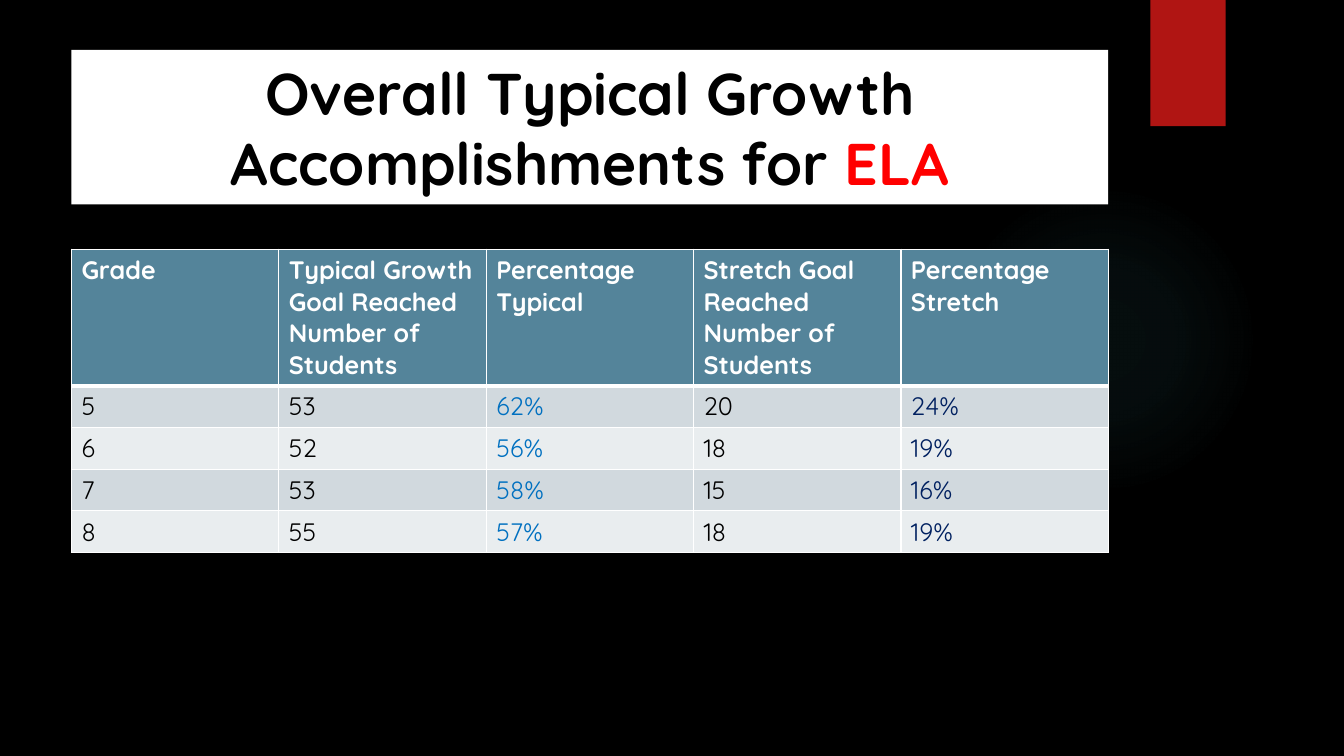
from lxml import etree
from pptx import Presentation
from pptx.dml.color import RGBColor
from pptx.enum.shapes import MSO_SHAPE as Shape
from pptx.enum.text import MSO_ANCHOR as Anchor, PP_ALIGN as Align
from pptx.oxml import parse_xml
from pptx.oxml.ns import nsdecls, qn
from pptx.util import Cm, Pt

# Colours
BLACK = RGBColor(0x00, 0x00, 0x00)
WHITE = RGBColor(0xFF, 0xFF, 0xFF)
RED = RGBColor(0xFF, 0x00, 0x00)
CRIMSON = RGBColor(0xB0, 0x15, 0x13)
TEAL = RGBColor(0x50, 0xB9, 0xC1)
STEEL = RGBColor(0x54, 0x84, 0x9A)
BLUE = RGBColor(0x00, 0x70, 0xC0)
NAVY = RGBColor(0x00, 0x20, 0x60)
BANDS = [RGBColor(0xD1, 0xD9, 0xDE), RGBColor(0xE9, 0xED, 0xEF)]
INKS = [BLACK, BLACK, BLUE, BLACK, NAVY]

# Content
FONT = "Quicksand"
TITLE = [("Overall Typical Growth Accomplishments for ", BLACK), ("ELA", RED)]
HEADS = [
    ["Grade"],
    ["Typical Growth Goal Reached", "Number of Students"],
    ["Percentage", "Typical"],
    ["Stretch Goal Reached", "Number of Students"],
    ["Percentage", "Stretch"],
]
ROWS = [
    ("5", "53", "62%", "20", "24%"),
    ("6", "52", "56%", "18", "19%"),
    ("7", "53", "58%", "15", "16%"),
    ("8", "55", "57%", "18", "19%"),
]
GLOW = [(0, 7), (36, 6), (69, 0)]  # stop and opacity, in percent

# Layout in cm
LEFT, WIDTH = 1.8, 26.13
HEAD_H, ROW_H = 3.42, 1.05


def add_text(frame, paras, size=18, bold=False, align=Align.LEFT):
    """Write paragraphs, each a list of (text, colour) runs."""
    frame.word_wrap = True
    for i, runs in enumerate(paras):
        para = frame.add_paragraph() if i else frame.paragraphs[0]
        para.alignment = align
        for text, ink in runs:
            run = para.add_run()
            run.text = text
            font = run.font
            font.name, font.size, font.bold = FONT, Pt(size), bold
            font.color.rgb = ink


def add_box(kind, x, y, w, h, fill=None):
    box = slide.shapes.add_shape(kind, Cm(x), Cm(y), Cm(w), Cm(h))
    box.shadow.inherit = False
    box.line.fill.background()
    if fill is None:
        box.fill.background()
    else:
        box.fill.solid()
        box.fill.fore_color.rgb = fill
    return box


def set_glow(box, ink):
    stops = "".join(
        f'<a:gs pos="{pos * 1000}"><a:srgbClr val="{ink}">'
        f'<a:alpha val="{alpha * 1000}"/></a:srgbClr></a:gs>'
        for pos, alpha in GLOW)
    grad = parse_xml(
        f'<a:gradFill {nsdecls("a")}><a:gsLst>{stops}</a:gsLst>'
        '<a:path path="circle"><a:fillToRect l="50000" t="50000" '
        'r="50000" b="50000"/></a:path></a:gradFill>')
    props = box._element.spPr
    props.replace(props.find(qn("a:noFill")), grad)


def set_cell(cell, fill, top=1, base=1):
    cell.fill.solid()
    cell.fill.fore_color.rgb = fill
    props = cell._tc.get_or_add_tcPr()
    sides = [("lnL", 1), ("lnR", 1), ("lnT", top), ("lnB", base)]
    for i, (side, width) in enumerate(sides):
        line = etree.Element(qn(f"a:{side}"), w=str(Pt(width)))
        solid = etree.SubElement(line, qn("a:solidFill"))
        etree.SubElement(solid, qn("a:srgbClr"), val=str(WHITE))
        props.insert(i, line)


# Slide
deck = Presentation()
deck.slide_width, deck.slide_height = Cm(33.87), Cm(19.05)
slide = deck.slides.add_slide(deck.slide_layouts[6])
slide.background.fill.solid()
slide.background.fill.fore_color.rgb = BLACK

# Glow and red tab
set_glow(add_box(Shape.OVAL, 23.9, 4.65, 7.82, 7.82), TEAL)
add_box(Shape.RECTANGLE, 28.99, 0, 1.9, 3.18, CRIMSON)

# Title
title = add_box(Shape.RECTANGLE, LEFT, 1.26, WIDTH, 3.89, WHITE)
title.text_frame.vertical_anchor = Anchor.MIDDLE
add_text(title.text_frame, [TITLE], size=42, bold=True, align=Align.CENTER)

# Table
high = HEAD_H + ROW_H * len(ROWS)
table = slide.shapes.add_table(
    len(ROWS) + 1, len(HEADS), Cm(LEFT), Cm(6.28), Cm(WIDTH), Cm(high)).table
table.first_row = table.horz_banding = False
for i, row in enumerate(table.rows):
    row.height = Cm(ROW_H if i else HEAD_H)

for c, lines in enumerate(HEADS):
    cell = table.cell(0, c)
    set_cell(cell, STEEL, base=3)
    add_text(cell.text_frame, [[(line, WHITE)] for line in lines], bold=True)

for r, row in enumerate(ROWS):
    for c, (text, ink) in enumerate(zip(row, INKS)):
        cell = table.cell(r + 1, c)
        set_cell(cell, BANDS[r % 2], top=1 if r else 3)
        add_text(cell.text_frame, [[(text, ink)]])

deck.save("out.pptx")
